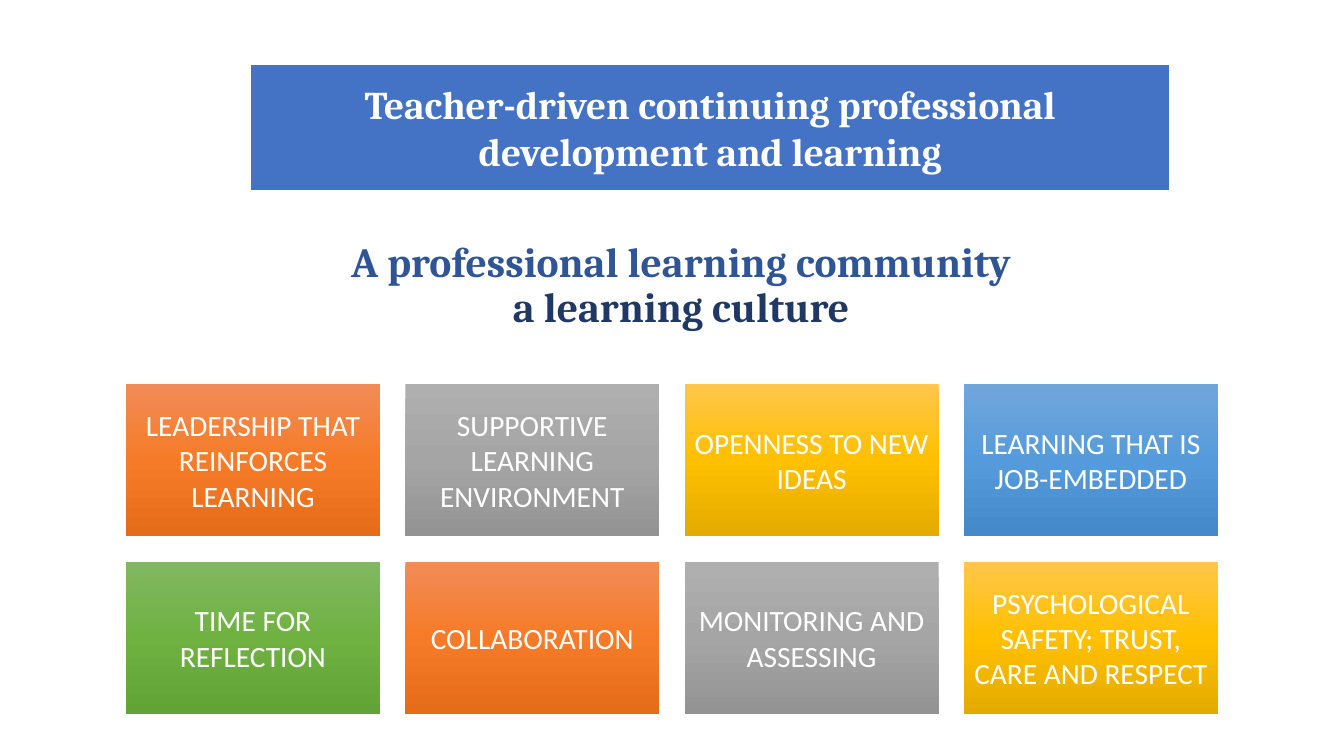
import copy

import pptx
import pptx.dml.color
import pptx.enum.shapes
import pptx.enum.text
import pptx.oxml.ns
import pptx.util

Pt = pptx.util.Pt
COLOURS = {"banner": "4472C4", "white": "FFFFFF", "community": "2F5597", "culture": "203864"}
GRADIENTS = {
    "orange": ("F18C57", "F67B28", "E56C19"),
    "grey": ("AFAFAF", "A5A5A5", "939393"),
    "gold": ("FFC64B", "FFC000", "E3AB00"),
    "blue": ("71A6DB", "559BDB", "448ACA"),
    "green": ("81B861", "6FB242", "62A336"),
}


def rgb(value):
    return pptx.dml.color.RGBColor.from_string(value)


class LearningSlide:
    heading_font = "Cambria"
    tile_font = "Calibri"

    def __init__(self, deck):
        self.slide = deck.slides.add_slide(deck.slide_layouts[5])

    def style(self, paragraph, font, size, bold=False):
        paragraph.alignment = pptx.enum.text.PP_ALIGN.CENTER
        paragraph.font.name = font
        paragraph.font.size = Pt(size)
        paragraph.font.bold = bold

    def box(self, text, left, top, width, height, font, size, bold=False, inset=7.2):
        shape = self.slide.shapes.add_shape(
            pptx.enum.shapes.MSO_SHAPE.RECTANGLE, Pt(left), Pt(top), Pt(width), Pt(height))
        shape.shadow.inherit = False
        frame = shape.text_frame
        frame.word_wrap = True
        frame.vertical_anchor = pptx.enum.text.MSO_ANCHOR.MIDDLE
        frame.margin_left = frame.margin_right = Pt(inset)
        frame.margin_top = frame.margin_bottom = Pt(inset)
        frame.text = text
        self.style(frame.paragraphs[0], font, size, bold)
        frame.paragraphs[0].font.color.rgb = rgb(COLOURS["white"])
        return shape

    def banner(self, text, left, top, width, height):
        shape = self.box(text, left, top, width, height, self.heading_font, 28, bold=True)
        shape.fill.solid()
        shape.fill.fore_color.rgb = rgb(COLOURS["banner"])
        shape.line.color.rgb = rgb(COLOURS["white"])
        shape.line.width = Pt(1)

    def title(self, lines, left, top, width, height):
        title = self.slide.shapes.title
        title.left, title.top, title.width, title.height = map(Pt, (left, top, width, height))
        frame = title.text_frame
        frame.auto_size = pptx.enum.text.MSO_AUTO_SIZE.NONE
        frame.vertical_anchor = pptx.enum.text.MSO_ANCHOR.BOTTOM
        heading = frame.paragraphs[0]
        self.style(heading, self.heading_font, 29.7, bold=True)
        heading.line_spacing = 0.9
        for index, (text, colour) in enumerate(lines):
            if index:
                heading.add_line_break()
            line = heading.add_run()
            line.text = text
            line.font.color.rgb = rgb(COLOURS[colour])

    def tile(self, text, gradient, left, top, width, height):
        shape = self.box(text, left, top, width, height, self.tile_font, 21, inset=6.5)
        shape.line.fill.background()
        shape.fill.gradient()
        shape.fill.gradient_angle = 270
        # A third stop gives the gradient its middle colour
        stop_list = next(shape.element.iter(pptx.oxml.ns.qn("a:gsLst")))
        stop_list.insert(1, copy.deepcopy(stop_list[0]))
        for index, stop in enumerate(shape.fill.gradient_stops):
            stop.position = index / 2
            stop.color.rgb = rgb(GRADIENTS[gradient][index])


def main():
    deck = pptx.Presentation()
    deck.slide_width, deck.slide_height = Pt(960), Pt(540)
    page = LearningSlide(deck)

    # Headings
    page.title([("A professional learning community", "community"),
                ("a learning culture", "culture")], 72.7, 136, 828, 104.4)
    page.banner("Teacher-driven continuing professional development and learning",
                178.6, 45.6, 657.2, 90.4)

    # Features of a learning culture, four to a row
    features = [
        ("LEADERSHIP THAT REINFORCES LEARNING", "orange"),
        ("SUPPORTIVE LEARNING ENVIRONMENT", "grey"),
        ("OPENNESS TO NEW IDEAS", "gold"),
        ("LEARNING THAT IS JOB-EMBEDDED", "blue"),
        ("TIME FOR REFLECTION", "green"),
        ("COLLABORATION", "orange"),
        ("MONITORING AND ASSESSING", "grey"),
        ("PSYCHOLOGICAL SAFETY; TRUST, CARE AND RESPECT", "gold"),
    ]
    width, height, gap = 181.4, 108.8, 18.1
    for index, (feature, gradient) in enumerate(features):
        row, column = divmod(index, 4)
        page.tile(feature, gradient, 90 + column * (width + gap),
                  274.3 + row * (height + gap), width, height)

    deck.save("out.pptx")


if __name__ == "__main__":
    main()
